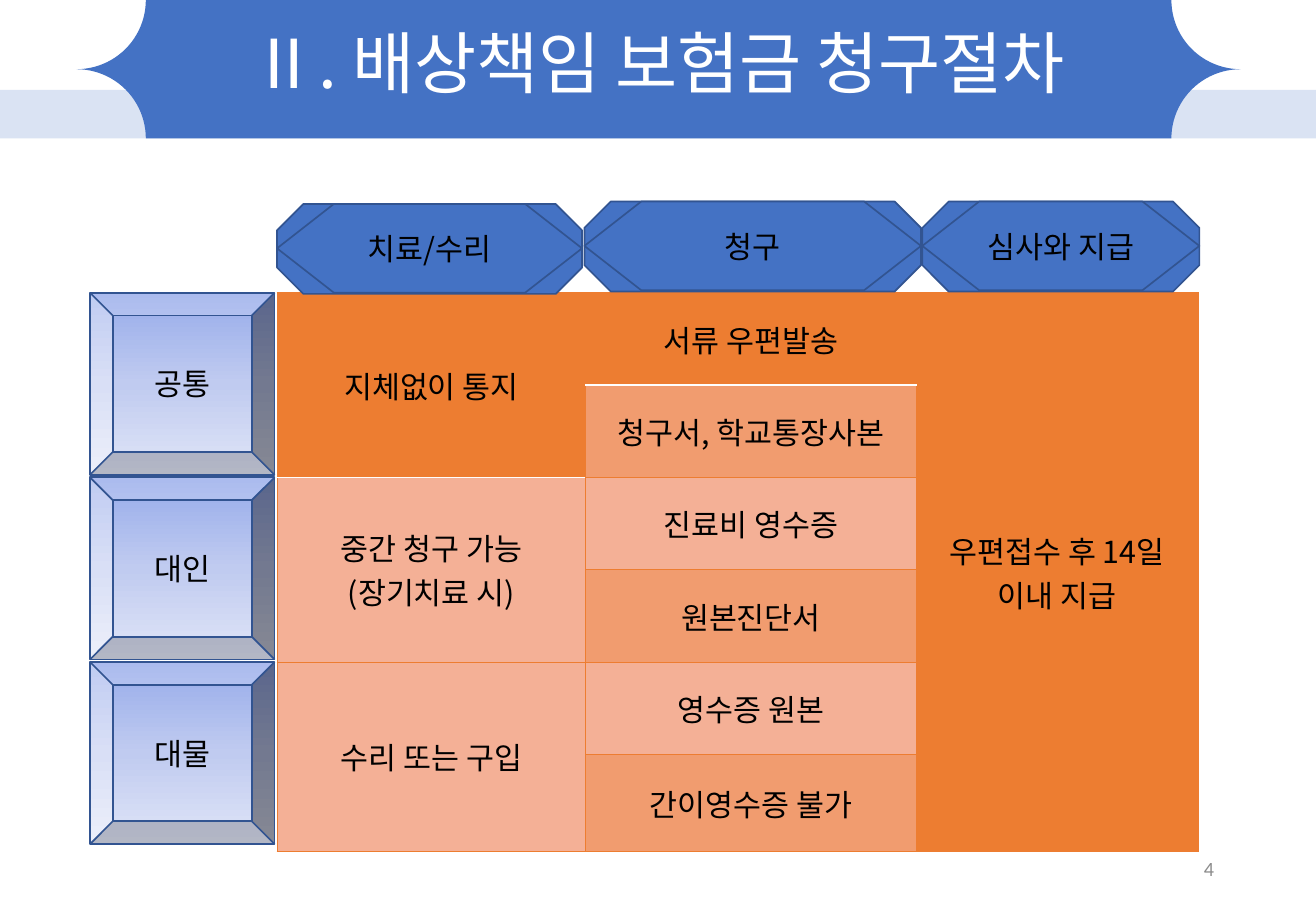
from copy import deepcopy
from pptx import Presentation
from pptx.dml.color import RGBColor
from pptx.enum import shapes, text
from pptx.oxml import ns, xmlchemy
from pptx.util import Inches, Pt

BLUE = RGBColor(0x44, 0x72, 0xC4)
NAVY = RGBColor(0x32, 0x54, 0x91)
PALE = RGBColor(0xDA, 0xE3, 0xF3)
ORANGE = RGBColor(0xED, 0x7D, 0x31)
PEACH = RGBColor(0xF1, 0x9C, 0x6F)
LIGHT = RGBColor(0xF4, 0xB0, 0x96)
WHITE = RGBColor(0xFF, 0xFF, 0xFF)
BLACK = RGBColor(0, 0, 0)
GRAY = RGBColor(0x8C, 0x8C, 0x8C)
FADE = [RGBColor(0x96, 0xAB, 0xEA), RGBColor(0xC0, 0xCB, 0xF0), RGBColor(0xE0, 0xE5, 0xF7)]
KOREAN = "Noto Sans CJK KR"
KIND = shapes.MSO_SHAPE
ALIGN = text.PP_ALIGN

prs = Presentation()
prs.slide_width, prs.slide_height = Inches(10.83), Inches(7.5)
slide = prs.slides.add_slide(prs.slide_layouts[6])


def write(frame, words, size=18, color=BLACK, align=ALIGN.CENTER, face=KOREAN):
    """Fill a frame with one paragraph, naming the face for Latin and Korean."""
    frame.word_wrap = True
    frame.vertical_anchor = text.MSO_ANCHOR.MIDDLE
    para = frame.paragraphs[0]
    para.text = words
    para.alignment = align
    for run in para.runs:
        run.font.size, run.font.name = Pt(size), face
        run.font.color.rgb = color
        east = xmlchemy.OxmlElement("a:ea")
        east.set("typeface", face)
        run.font._element.find(ns.qn("a:latin")).addnext(east)


def draw(kind, left, top, width, height, fill=BLUE, line=NAVY):
    shape = slide.shapes.add_shape(kind, *map(Inches, (left, top, width, height)))
    shape.shadow.inherit = False
    shape.fill.solid()
    shape.fill.fore_color.rgb = fill
    if line is None:
        shape.line.fill.background()
    else:
        shape.line.color.rgb, shape.line.width = line, Pt(1)
    return shape


# Title band and page number
draw(KIND.RECTANGLE, 0, 0.74, 10.83, 0.4, PALE, None)
draw(KIND.PLAQUE, 0.63, 0, 9.58, 1.14, BLUE, None).adjustments[0] = 0.5
title = slide.shapes.add_textbox(Inches(1.25), 0, Inches(8.33), Inches(1.09))
write(title.text_frame, "Ⅱ. 배상책임 보험금 청구절차", 40, WHITE)
title.text_frame.paragraphs[0].line_spacing = 0.9
page = slide.shapes.add_textbox(Inches(7.65), Inches(6.95), Inches(2.44), Inches(0.4))
write(page.text_frame, "4", 12, GRAY, ALIGN.RIGHT, "Calibri")

# Procedure table
HIGH = [0.76] * 5 + [0.8]
WIDE = [2.54, 2.72, 2.32]
table = slide.shapes.add_table(6, 3, Inches(2.28), Inches(2.41),
                               Inches(sum(WIDE)), Inches(sum(HIGH))).table
table.first_row = table.horz_banding = False
for row, high in zip(table.rows, HIGH):
    row.height = Inches(high)
for col, wide in zip(table.columns, WIDE):
    col.width = Inches(wide)

WHITE_EDGES = {(0, 1, "B"), (1, 1, "T"), (1, 0, "B"), (2, 0, "T")}
for r in range(6):
    for c in range(3):
        cell = table.cell(r, c)
        cell.fill.solid()
        if c == 2 or r == 0 or (r, c) == (1, 0):
            cell.fill.fore_color.rgb = ORANGE
        else:
            cell.fill.fore_color.rgb = PEACH if c == 1 and r % 2 else LIGHT
        for spot, side in enumerate("LRTB"):
            pale = (r, c, side) in WHITE_EDGES
            edge = xmlchemy.OxmlElement(f"a:ln{side}")
            edge.set("w", str(Pt(1 if pale else 0.5)))
            paint = xmlchemy.OxmlElement("a:solidFill")
            hue = xmlchemy.OxmlElement("a:srgbClr")
            hue.set("val", str(WHITE if pale else ORANGE))
            paint.append(hue)
            edge.append(paint)
            cell._tc.tcPr.insert(spot, edge)

STEPS = [
    (0, ["지체없이 통지", "중간 청구 가능\v(장기치료 시)", "수리 또는 구입"]),
    (1, ["서류 우편발송", "청구서, 학교통장사본", "진료비 영수증",
         "원본진단서", "영수증 원본", "간이영수증 불가"]),
    (2, ["우편접수 후 14일 이내 지급"]),
]
for c, words in STEPS:
    span = 6 // len(words)
    for i, label in enumerate(words):
        cell = table.cell(i * span, c)
        if span > 1:
            cell.merge(table.cell((i + 1) * span - 1, c))
        write(cell.text_frame, label)
        cell.vertical_anchor = text.MSO_ANCHOR.MIDDLE

# Row labels
for i, label in enumerate(["공통", "대인", "대물"]):
    bevel = draw(KIND.BEVEL, 0.74, 2.41 + 1.52 * i, 1.52, 1.5)
    bevel.fill.gradient()
    bevel.fill.gradient_angle = 270
    first = bevel.fill.gradient_stops[0]._gs
    first.addnext(deepcopy(first))
    for stop, color, place in zip(bevel.fill.gradient_stops, FADE, (0, 0.5, 1)):
        stop.color.rgb, stop.position = color, place
    write(bevel.text_frame, label)

# Column headings
for label, left, top, wide in [("치료/수리", 2.28, 1.68, 2.51),
                               ("청구", 4.81, 1.66, 2.77),
                               ("심사와 지급", 7.59, 1.66, 2.28)]:
    draw(KIND.OCTAGON, left, top, wide, 0.74)
    head = draw(KIND.HEXAGON, left, top, wide, 0.73)
    head.adjustments[0] = 0.64
    write(head.text_frame, label)

prs.save("out.pptx")
